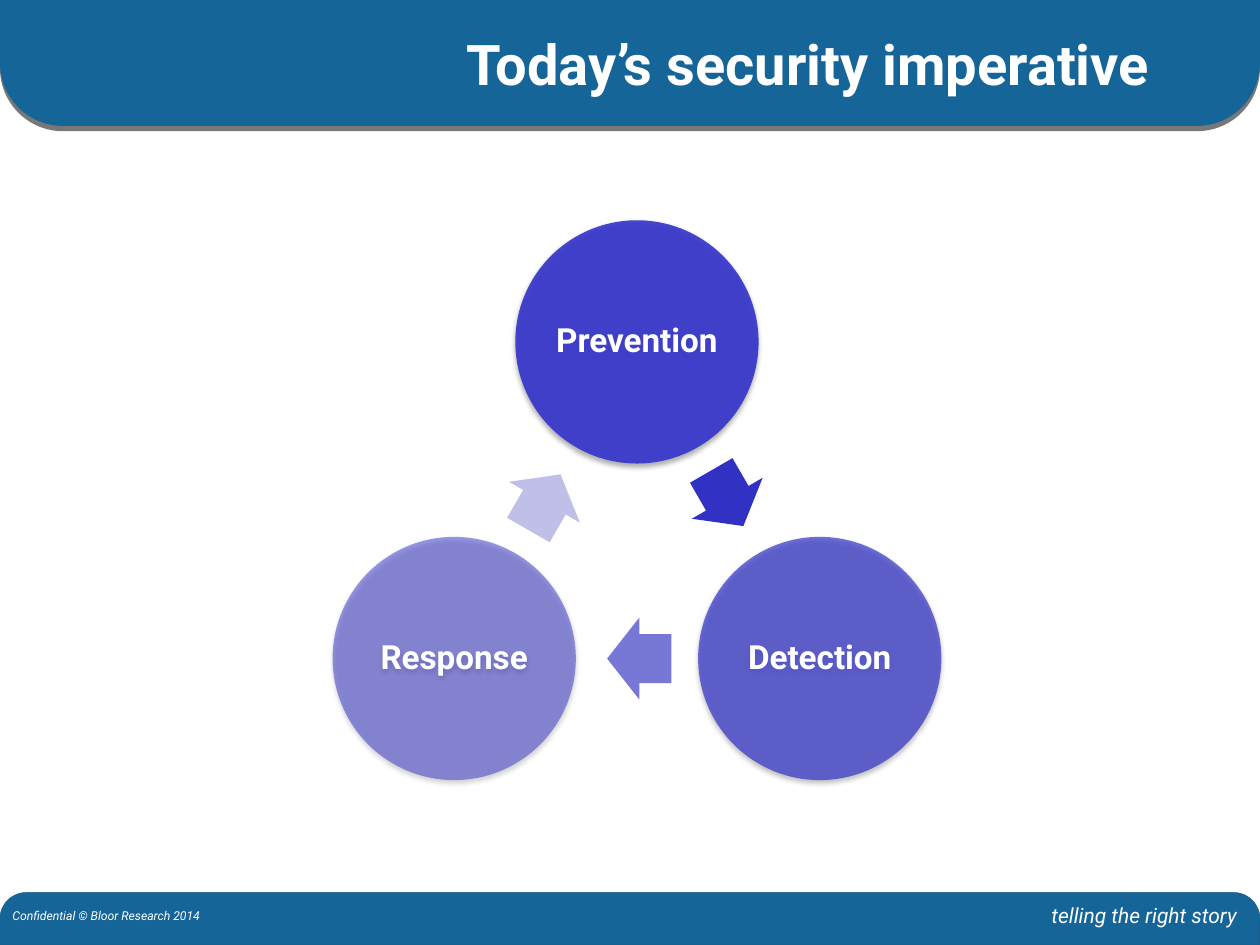
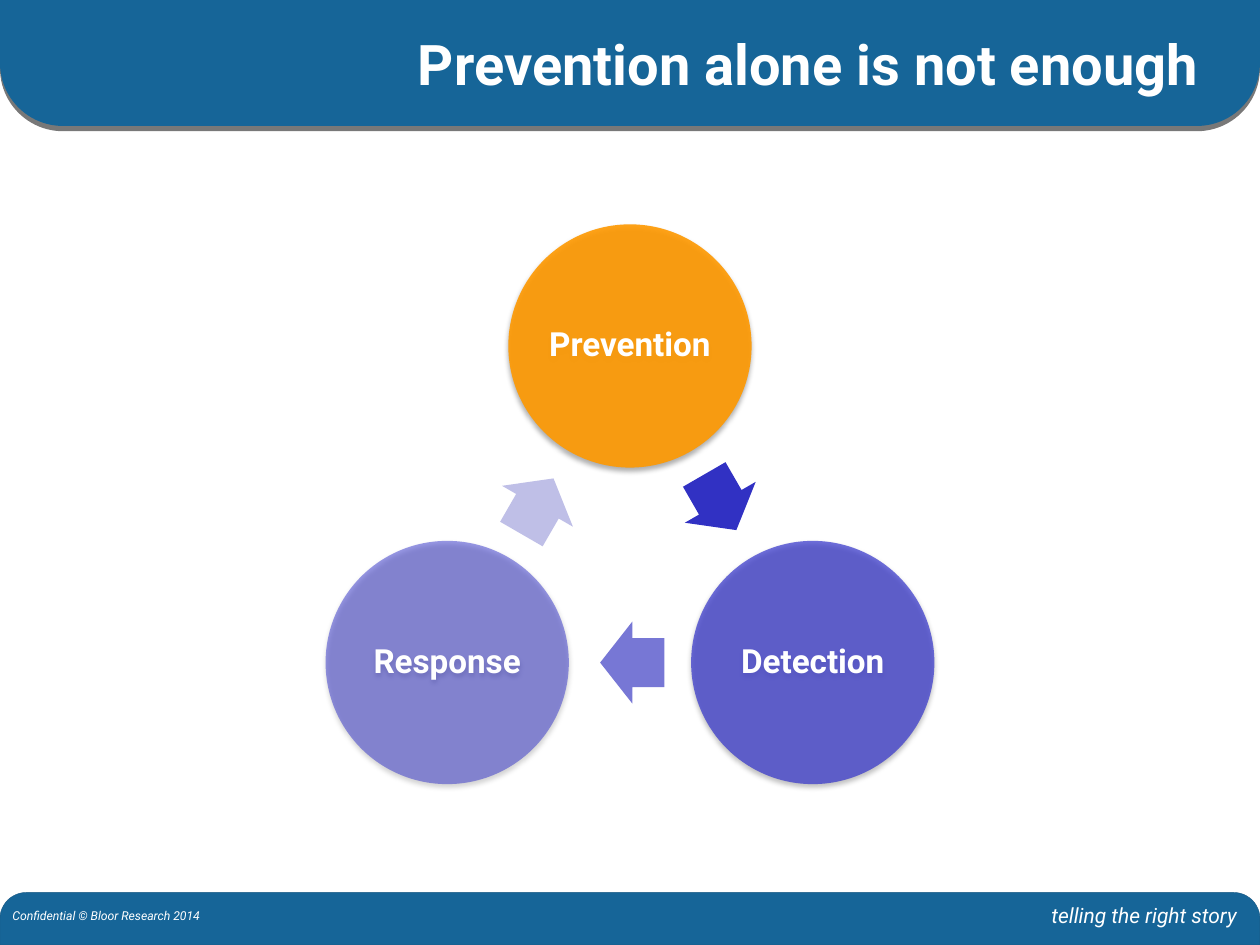
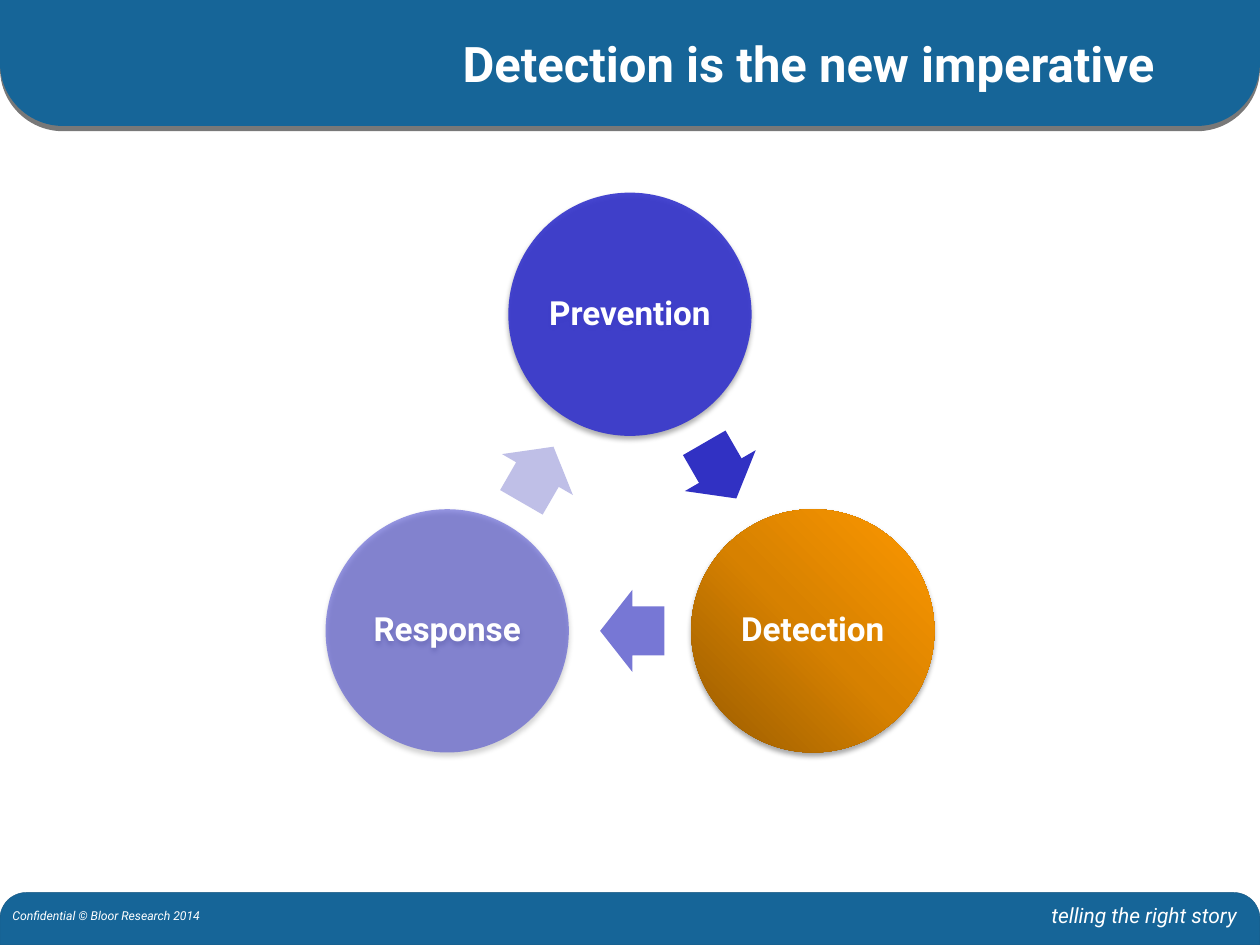
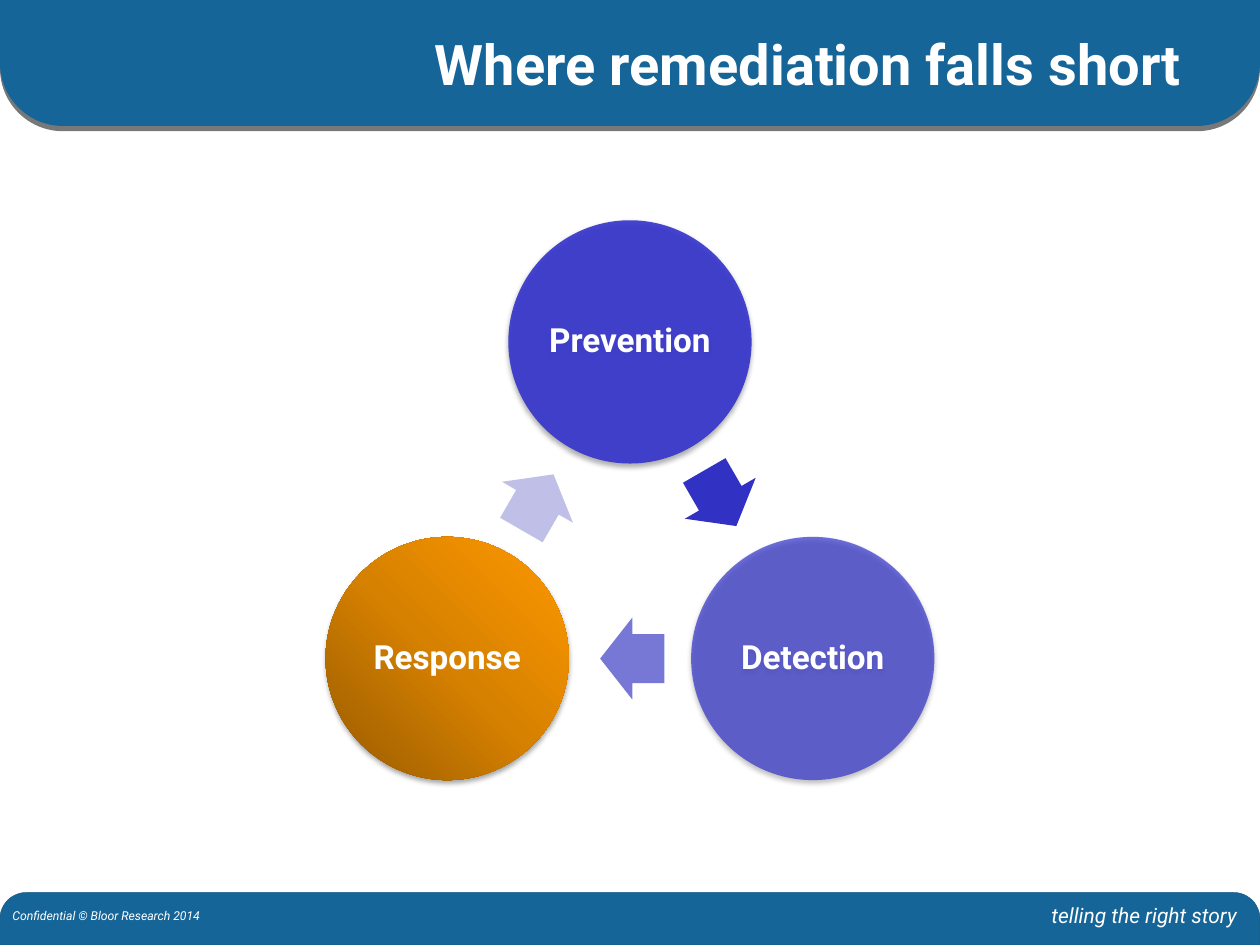
import math
from dataclasses import dataclass

import lxml.etree
import pptx
import pptx.dml.color
import pptx.enum.shapes
import pptx.enum.text
import pptx.oxml.ns
import pptx.shapes.autoshape
import pptx.slide
import pptx.util

Pt = pptx.util.Pt
qn = pptx.oxml.ns.qn
SHAPES = pptx.enum.shapes.MSO_SHAPE
ALIGN = pptx.enum.text.PP_ALIGN
ANCHOR = pptx.enum.text.MSO_ANCHOR

SLIDE_WIDTH, SLIDE_HEIGHT = 720, 540
FONT = "Roboto"
WHITE, BLACK = "FFFFFF", "000000"
BAND, BAND_EDGE = "166598", "1A5A85"
INDIGO, ORANGE = "3333CC", "FF9900"

CIRCLE_SIZE = 139
CIRCLE_RING = 120.6
ARROW_RING = 60.3
ARROW_SETBACK = 1.3
ARROW_WIDTH, ARROW_HEIGHT = 36.7, 46.8


@dataclass(frozen=True)
class Box:
    left: float
    top: float
    width: float
    height: float

    @classmethod
    def around(cls, x: float, y: float, width: float, height: float) -> "Box":
        return cls(x - width / 2, y - height / 2, width, height)

    def lengths(self) -> list[int]:
        return [Pt(value) for value in (self.left, self.top, self.width, self.height)]


@dataclass(frozen=True)
class TextStyle:
    size: float
    align: ALIGN = ALIGN.CENTER
    bold: bool = False
    italic: bool = False


@dataclass(frozen=True)
class Shadow:
    opacity: int
    blur: float
    distance: float


@dataclass(frozen=True)
class Solid:
    color: str
    opacity: int = 100


@dataclass(frozen=True)
class Gradient:
    stops: tuple[tuple[int, str], ...]
    angle: float


Paint = Solid | Gradient


@dataclass(frozen=True)
class Stage:
    name: str
    angle: int
    paint: Paint
    arrow_color: str


@dataclass(frozen=True)
class CycleSlide:
    title: str
    center_x: float
    center_y: float
    highlighted: str = ""
    highlight: Paint | None = None
    title_size: float = 32


HEADER_SHADOW = Shadow(53, 0, 3)
CIRCLE_SHADOW = Shadow(35, 3.1, 1.8)
ORANGE_GRADIENT = Gradient(((0, "975B00"), (50, "D78100"), (100, ORANGE)), 45)
LABEL_STYLE = TextStyle(19, bold=True)

STAGES = (
    Stage("Prevention", -90, Solid(INDIGO, 90), "3131C3"),
    Stage("Detection", 30, Solid(INDIGO, 70), "7777D5"),
    Stage("Response", 150, Solid(INDIGO, 50), "BFBFE7"),
)

SLIDES = (
    CycleSlide("Today’s security imperative", 364, 316),
    CycleSlide("Prevention alone is not enough", 360, 318.3, "Prevention", Solid(ORANGE, 90)),
    CycleSlide("Detection is the new imperative", 360, 300.2, "Detection", ORANGE_GRADIENT, 28),
    CycleSlide("Where remediation falls short", 360, 316, "Response", ORANGE_GRADIENT),
)


def rgb(color: str) -> pptx.dml.color.RGBColor:
    return pptx.dml.color.RGBColor.from_string(color)


def add_color(parent: lxml.etree._Element, color: str, opacity: int = 100) -> None:
    element = lxml.etree.SubElement(parent, qn("a:srgbClr"), val=color)
    if opacity < 100:
        lxml.etree.SubElement(element, qn("a:alpha"), val=str(opacity * 1000))


def apply_paint(shape: pptx.shapes.autoshape.Shape, paint: Paint) -> None:
    properties = shape._element.spPr
    if isinstance(paint, Gradient):
        shape.fill.gradient()
        shape.fill.gradient_angle = paint.angle
        stop_list = properties.find(".//" + qn("a:gsLst"))
        for default_stop in list(stop_list):
            stop_list.remove(default_stop)
        for position, color in paint.stops:
            stop = lxml.etree.SubElement(stop_list, qn("a:gs"), pos=str(position * 1000))
            add_color(stop, color)
        return
    shape.fill.solid()
    shape.fill.fore_color.rgb = rgb(paint.color)
    if paint.opacity < 100:
        color_element = properties.find(qn("a:solidFill"))[0]
        lxml.etree.SubElement(color_element, qn("a:alpha"), val=str(paint.opacity * 1000))


def apply_shadow(shape: pptx.shapes.autoshape.Shape, shadow: Shadow) -> None:
    """Cast a black shadow straight down."""
    effects = shape._element.spPr.find(qn("a:effectLst"))
    outer = lxml.etree.SubElement(
        effects, qn("a:outerShdw"), blurRad=str(Pt(shadow.blur)), dist=str(Pt(shadow.distance)),
        dir=str(90 * 60000), rotWithShape="0",
    )
    add_color(outer, BLACK, shadow.opacity)


def add_shape(
    slide: pptx.slide.Slide, kind: SHAPES, box: Box, paint: Paint,
    adjustments: tuple[float, ...] = (), shadow: Shadow | None = None,
) -> pptx.shapes.autoshape.Shape:
    shape = slide.shapes.add_shape(kind, *box.lengths())
    for index, value in enumerate(adjustments):
        shape.adjustments[index] = value
    shape.shadow.inherit = False
    shape.line.fill.background()
    apply_paint(shape, paint)
    if shadow:
        apply_shadow(shape, shadow)
    return shape


def write_text(shape: pptx.shapes.autoshape.Shape, text: str, style: TextStyle) -> None:
    shape.text_frame.text = text
    para = shape.text_frame.paragraphs[0]
    para.alignment = style.align
    font = para.runs[0].font
    font.name = FONT
    font.size = Pt(style.size)
    font.bold = style.bold
    font.italic = style.italic
    font.color.rgb = rgb(WHITE)


def add_text(
    slide: pptx.slide.Slide, box: Box, text: str, style: TextStyle, anchor: ANCHOR = ANCHOR.TOP,
) -> None:
    text_box = slide.shapes.add_textbox(*box.lengths())
    text_box.text_frame.word_wrap = True
    text_box.text_frame.vertical_anchor = anchor
    write_text(text_box, text, style)


def add_frame(slide: pptx.slide.Slide, title: str, title_size: float) -> None:
    """Draw the header with its title and the footer with its two lines."""
    add_shape(slide, SHAPES.ROUND_2_SAME_RECTANGLE, Box(0, 0, SLIDE_WIDTH, 72), Solid(BAND),
              (0, 0.5), HEADER_SHADOW)
    footer = add_shape(slide, SHAPES.ROUND_2_SAME_RECTANGLE, Box(0, 510, SLIDE_WIDTH, 30),
                       Solid(BAND), (0.5, 0))
    footer.line.color.rgb = rgb(BAND_EDGE)
    footer.line.width = Pt(0.25)
    add_text(slide, Box(408, 512, 306, 21.6), "telling the right story",
             TextStyle(12, ALIGN.RIGHT, italic=True))
    add_text(slide, Box(0, 515.5, 240, 15.8), "Confidential © Bloor Research 2014",
             TextStyle(7, ALIGN.LEFT, italic=True))
    add_text(slide, Box(228, 12, 468, 48), title, TextStyle(title_size, bold=True), ANCHOR.MIDDLE)


def add_circle(slide: pptx.slide.Slide, stage: Stage, content: CycleSlide) -> None:
    angle = math.radians(stage.angle)
    x = content.center_x + CIRCLE_RING * math.cos(angle)
    y = content.center_y + CIRCLE_RING * math.sin(angle)
    paint = content.highlight if stage.name == content.highlighted else stage.paint
    circle = add_shape(slide, SHAPES.OVAL, Box.around(x, y, CIRCLE_SIZE, CIRCLE_SIZE), paint,
                       shadow=CIRCLE_SHADOW)
    frame = circle.text_frame
    frame.margin_left = frame.margin_right = frame.margin_top = frame.margin_bottom = Pt(2)
    frame.word_wrap = False
    frame.vertical_anchor = ANCHOR.MIDDLE
    write_text(circle, stage.name, LABEL_STYLE)
    frame.paragraphs[0].line_spacing = 0.9


def add_arrow(slide: pptx.slide.Slide, stage: Stage, content: CycleSlide) -> None:
    """Draw the arrow that leads clockwise from a stage to the next one."""
    angle = math.radians(stage.angle + 60)
    heading = angle + math.pi / 2
    x = content.center_x + ARROW_RING * math.cos(angle) - ARROW_SETBACK * math.cos(heading)
    y = content.center_y + ARROW_RING * math.sin(angle) - ARROW_SETBACK * math.sin(heading)
    arrow = add_shape(slide, SHAPES.RIGHT_ARROW, Box.around(x, y, ARROW_WIDTH, ARROW_HEIGHT),
                      Solid(stage.arrow_color), (0.6, 0.5))
    arrow.rotation = stage.angle + 150


def main() -> None:
    deck = pptx.Presentation()
    deck.slide_width, deck.slide_height = Pt(SLIDE_WIDTH), Pt(SLIDE_HEIGHT)
    blank_layout = deck.slide_layouts[6]
    for content in SLIDES:
        slide = deck.slides.add_slide(blank_layout)
        add_frame(slide, content.title, content.title_size)
        for stage in STAGES:
            add_circle(slide, stage, content)
            add_arrow(slide, stage, content)
    deck.save("out.pptx")


if __name__ == "__main__":
    main()
